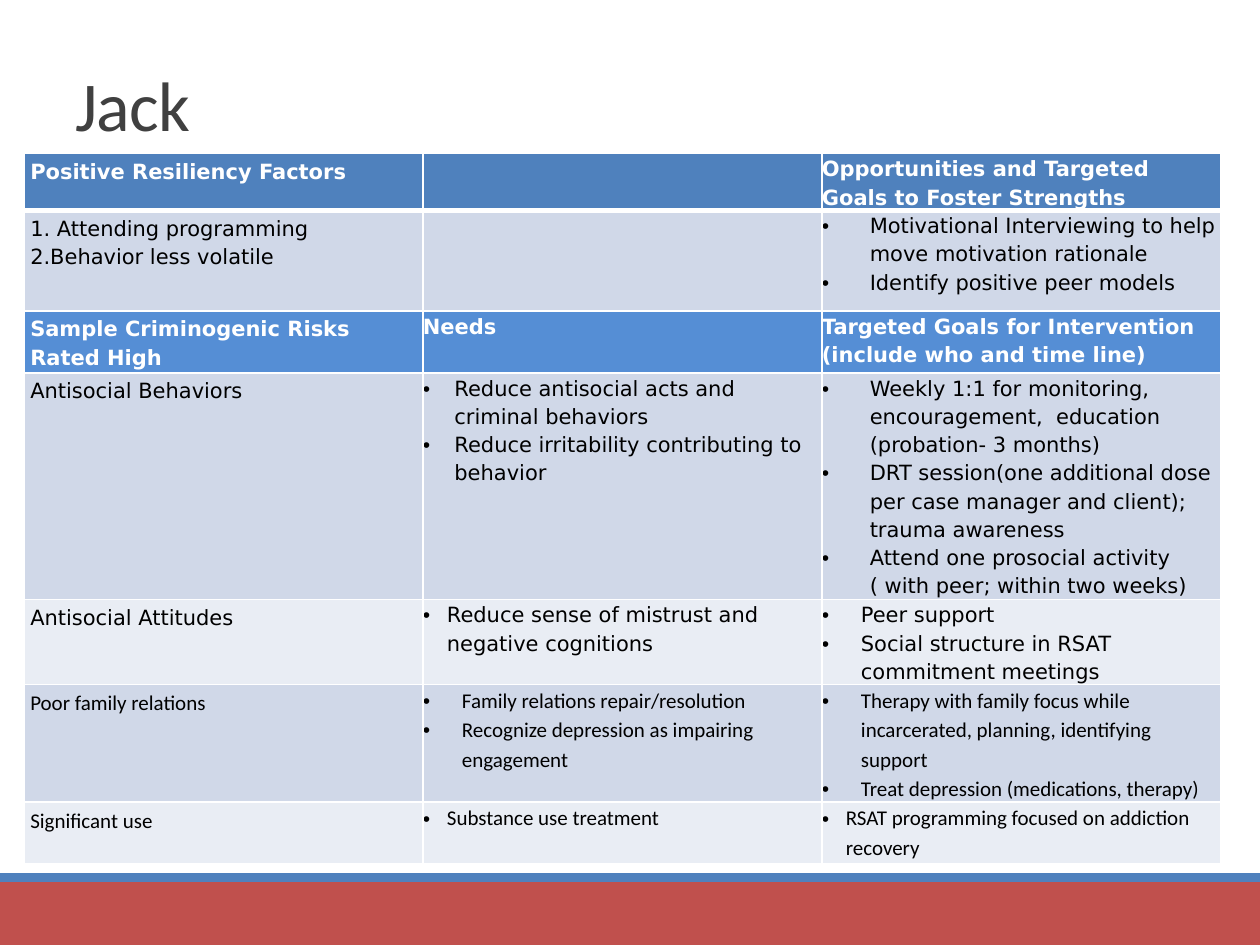
from lxml import etree
from pptx import Presentation
from pptx.dml.color import RGBColor
from pptx.enum.shapes import MSO_SHAPE
from pptx.enum.text import MSO_ANCHOR, MSO_AUTO_SIZE, PP_ALIGN
from pptx.oxml.ns import qn
from pptx.util import Inches, Pt

RECT = MSO_SHAPE.RECTANGLE
BOTTOM = MSO_ANCHOR.BOTTOM
LEFT = PP_ALIGN.LEFT
NO_FIT = MSO_AUTO_SIZE.NONE


class Theme:
    white, black, gray = "FFFFFF", "000000", "404040"
    red, blue, sky = "C0504D", "4F81BD", "558ED5"
    mid, pale = "D0D8E8", "E9EDF4"
    sans, wide = "Calibri", "DejaVu Sans"
    title, body = 40, 12


def put_text(para, text, font=Theme.wide, size=Theme.body, color=Theme.black,
             bold=False, lead=1.15, indent=0, track=0):
    """Fill a paragraph; an indent above zero also gives it a bullet."""
    para.alignment = LEFT
    para.line_spacing = lead
    run = para.add_run()
    run.text = text
    run.font.name = font
    run.font.size = Pt(size)
    run.font.bold = bold
    run.font.color.rgb = RGBColor.from_string(color)
    if track:
        run.font._element.set("spc", str(track))
    if indent:
        props = para._p.get_or_add_pPr()
        props.set("marL", str(Inches(indent)))
        props.set("indent", str(-Inches(indent)))
        etree.SubElement(props, qn("a:buFont"), typeface="Arial")
        etree.SubElement(props, qn("a:buChar"), char="•")


def set_edges(cell, **widths):
    """Draw white cell edges, 1 point wide unless a side is named."""
    props = cell._tc.get_or_add_tcPr()
    for side in ("lnL", "lnR", "lnT", "lnB"):
        line = etree.SubElement(props, qn("a:" + side),
                                w=str(Pt(widths.get(side, 1))))
        fill = etree.SubElement(line, qn("a:solidFill"))
        etree.SubElement(fill, qn("a:srgbClr"), val=Theme.white)


class Page:
    """Holds the theme and the slide being built."""

    def __init__(self, theme, slide):
        self.theme, self.slide = theme, slide

    def bar(self, top, height, color):
        shape = self.slide.shapes.add_shape(
            RECT, 0, Inches(top), Inches(10), Inches(height))
        shape.shadow.inherit = False
        shape.fill.solid()
        shape.fill.fore_color.rgb = RGBColor.from_string(color)
        shape.line.fill.background()

    def title(self, text, left, top, width, height):
        shape = self.slide.shapes.title
        shape.left, shape.top = Inches(left), Inches(top)
        shape.width, shape.height = Inches(width), Inches(height)
        frame = shape.text_frame
        frame.auto_size = NO_FIT
        frame.vertical_anchor = BOTTOM
        put_text(frame.paragraphs[0], text, font=self.theme.sans,
                 size=self.theme.title, color=self.theme.gray,
                 lead=0.85, track=-50)

    def cell(self, cell, lines, fill, first, edges, **style):
        side, end = (0.05, 0.02) if first else (0, 0)
        cell.margin_left = cell.margin_right = Inches(side)
        cell.margin_top = cell.margin_bottom = Inches(end)
        set_edges(cell, **edges)
        cell.fill.solid()
        cell.fill.fore_color.rgb = RGBColor.from_string(fill)
        frame = cell.text_frame
        for i, line in enumerate(lines):
            para = frame.add_paragraph() if i else frame.paragraphs[0]
            put_text(para, line, **style)

    def table(self, rows, left, top, width):
        high = sum(row["height"] for row in rows)
        table = self.slide.shapes.add_table(
            len(rows), 3, Inches(left), Inches(top),
            Inches(width), Inches(high)).table
        for r, row in enumerate(rows):
            table.rows[r].height = Inches(row["height"])
            head = row.get("head", False)
            edges = {0: {"lnB": 3}, 1: {"lnT": 3}}.get(r, {})
            for c, lines in enumerate(row["cells"]):
                self.cell(table.cell(r, c), lines, row["fill"], c == 0, edges,
                          font=row.get("font", self.theme.wide), bold=head,
                          color=self.theme.white if head else self.theme.black,
                          indent=row.get("indents", (0, 0, 0))[c])


ROWS = [
    dict(height=0.44, fill=Theme.blue, head=True, cells=[
        ["Positive Resiliency Factors"],
        [],
        ["Opportunities and Targeted Goals to Foster Strengths"]]),
    dict(height=0.8, fill=Theme.mid, indents=(0, 0, 0.38), cells=[
        ["1. Attending programming", "2.Behavior less volatile"],
        [],
        ["Motivational Interviewing to help move motivation rationale",
         "Identify positive peer models"]]),
    dict(height=0.49, fill=Theme.sky, head=True, cells=[
        ["Sample Criminogenic Risks Rated High"],
        ["Needs"],
        ["Targeted Goals for Intervention (include who and time line)"]]),
    dict(height=1.8, fill=Theme.mid, indents=(0, 0.25, 0.38), cells=[
        ["Antisocial Behaviors"],
        ["Reduce antisocial acts and criminal behaviors",
         "Reduce irritability contributing to behavior"],
        ["Weekly 1:1 for monitoring, encouragement,  education "
         "(probation- 3 months)",
         "DRT session(one additional dose per case manager and client); "
         "trauma awareness",
         "Attend one prosocial activity ( with peer; within two weeks)"]]),
    dict(height=0.67, fill=Theme.pale, indents=(0, 0.19, 0.31), cells=[
        ["Antisocial Attitudes"],
        ["Reduce sense of mistrust and negative cognitions"],
        ["Peer support", "Social structure in RSAT commitment meetings"]]),
    dict(height=0.93, fill=Theme.mid, font=Theme.sans,
         indents=(0, 0.31, 0.31), cells=[
             ["Poor family relations"],
             ["Family relations repair/resolution",
              "Recognize depression as impairing engagement"],
             ["Therapy with family focus while incarcerated, planning, "
              "identifying support",
              "Treat depression (medications, therapy)"]]),
    dict(height=0.49, fill=Theme.pale, font=Theme.sans,
         indents=(0, 0.19, 0.19), cells=[
             ["Significant use"],
             ["Substance use treatment"],
             ["RSAT programming focused on addiction recovery"]]),
]


def main():
    deck = Presentation()
    deck.slide_width, deck.slide_height = Inches(10), Inches(7.5)
    page = Page(Theme, deck.slides.add_slide(deck.slide_layouts[5]))
    page.bar(7, 0.5, Theme.red)
    page.bar(6.93, 0.07, Theme.blue)
    page.title("Jack", 0.5, 0.15, 8.25, 1.06)
    page.table(ROWS, 0.19, 1.22, 9.5)
    deck.save("out.pptx")


if __name__ == "__main__":
    main()
